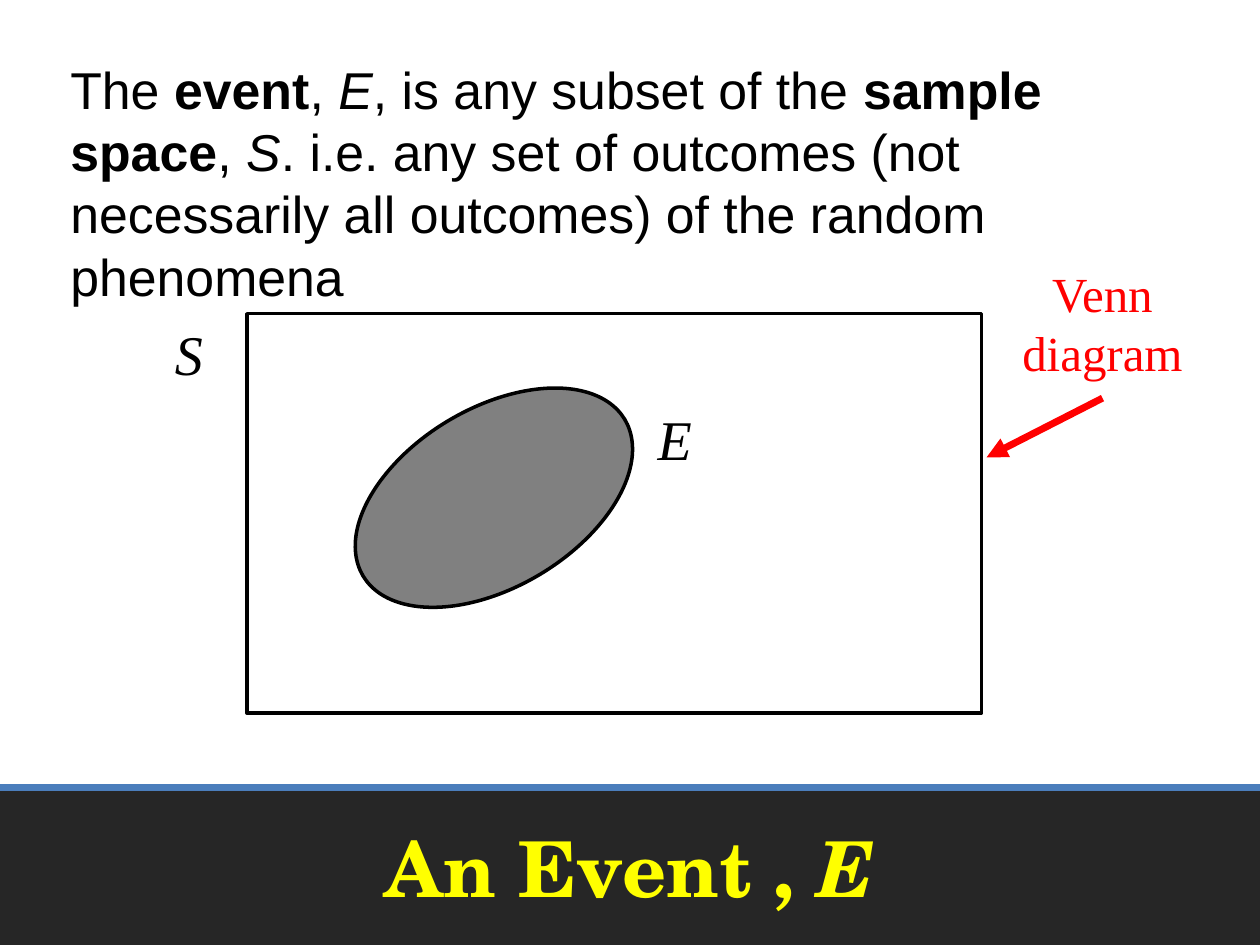
from typing import NamedTuple

from lxml.etree import SubElement
from pptx import Presentation
from pptx.dml.color import RGBColor
from pptx.enum.shapes import MSO_CONNECTOR as CONN, MSO_SHAPE as SHAPE
from pptx.enum.text import MSO_ANCHOR as ANCHOR, PP_ALIGN as ALIGN
from pptx.oxml.ns import qn
from pptx.util import Inches, Pt


class Box(NamedTuple):
    left: float
    top: float
    width: float
    height: float


class Run(NamedTuple):
    text: str
    bold: bool = False
    italic: bool = False


class Style(NamedTuple):
    font: str
    size: float
    color: str = "000000"
    align: ALIGN = ALIGN.LEFT


class Label(NamedTuple):
    box: Box
    runs: list[Run]
    style: Style


SYMBOL = Style("Times New Roman", 32)
LABELS = [
    Label(
        Box(0.46, 0.41, 9, 1.75),
        [
            Run("The "),
            Run("event", bold=True),
            Run(", "),
            Run("E", italic=True),
            Run(", is any subset of the "),
            Run("sample space", bold=True),
            Run(", "),
            Run("S", italic=True),
            Run(". i.e. any set of outcomes (not necessarily all outcomes) "
                "of the random phenomena"),
        ],
        Style("Arial", 29.6),
    ),
    Label(Box(1.29, 2.49, 0.92, 0.58), [Run("S", italic=True)], SYMBOL),
    Label(Box(5.12, 3.16, 0.92, 0.58), [Run("E", italic=True)], SYMBOL),
    Label(Box(7.93, 2.04, 1.64, 1.03), [Run("Venn diagram")],
          Style("Times New Roman", 28, "FF0000", ALIGN.CENTER)),
]


def rgb(color: str) -> RGBColor:
    return RGBColor.from_string(color)


def inches(values) -> list:
    return [Inches(v) for v in values]


def write(tf, runs: list[Run], style: Style) -> None:
    tf.word_wrap = True
    p = tf.paragraphs[0]
    p.alignment = style.align
    for run in runs:
        r = p.add_run()
        r.text = run.text
        font = r.font
        font.name, font.size = style.font, Pt(style.size)
        font.bold, font.italic = run.bold, run.italic
        font.color.rgb = rgb(style.color)


def add_label(s, label: Label) -> None:
    tf = s.shapes.add_textbox(*inches(label.box)).text_frame
    write(tf, label.runs, label.style)


def add_figure(s, kind: SHAPE, box: Box, fill: str = "", line: str = "",
               rotation: float = 0):
    sp = s.shapes.add_shape(kind, *inches(box))
    sp.shadow.inherit = False
    sp.rotation = rotation
    if fill:
        sp.fill.solid()
        sp.fill.fore_color.rgb = rgb(fill)
    else:
        sp.fill.background()
    if line:
        sp.line.color.rgb = rgb(line)
        sp.line.width = Pt(2)
    else:
        sp.line.fill.background()


def add_line(s, start: tuple, end: tuple, color: str, arrow: bool = False) -> None:
    cx = s.shapes.add_connector(CONN.STRAIGHT, *inches(start + end))
    cx.line.color.rgb = rgb(color)
    cx.line.width = Pt(4)
    if arrow:
        SubElement(cx.line._get_or_add_ln(), qn("a:tailEnd"), type="triangle")
    SubElement(cx._element.spPr, qn("a:effectLst"))


def add_title(s, box: Box, runs: list[Run], style: Style) -> None:
    title = s.shapes.title
    title.left, title.top, title.width, title.height = inches(box)
    title.text_frame.vertical_anchor = ANCHOR.MIDDLE
    write(title.text_frame, runs, style)
    s.shapes._spTree.append(title._element)


def main() -> None:
    prs = Presentation()
    prs.slide_width, prs.slide_height = inches((10, 7.5))
    s = prs.slides.add_slide(prs.slide_layouts[5])
    add_figure(s, SHAPE.RECTANGLE, Box(0, 6.25, 10, 1.25), fill="262626")
    add_line(s, (0, 6.25), (10, 6.25), "4B7EBC")
    add_title(s, Box(0.25, 6.25, 9.5, 1.25),
              [Run("An Event , ", bold=True), Run("E", bold=True, italic=True)],
              Style("TeX Gyre Schola", 44, "FFFF00", ALIGN.CENTER))
    add_figure(s, SHAPE.RECTANGLE, Box(1.96, 2.49, 5.83, 3.17), line="000000")
    add_figure(s, SHAPE.OVAL, Box(2.71, 3.24, 2.42, 1.42), "808080", "000000", 329.1)
    for label in LABELS:
        add_label(s, label)
    add_line(s, (8.75, 3.16), (7.83, 3.63), "FF0000", arrow=True)
    prs.save("out.pptx")


if __name__ == "__main__":
    main()
